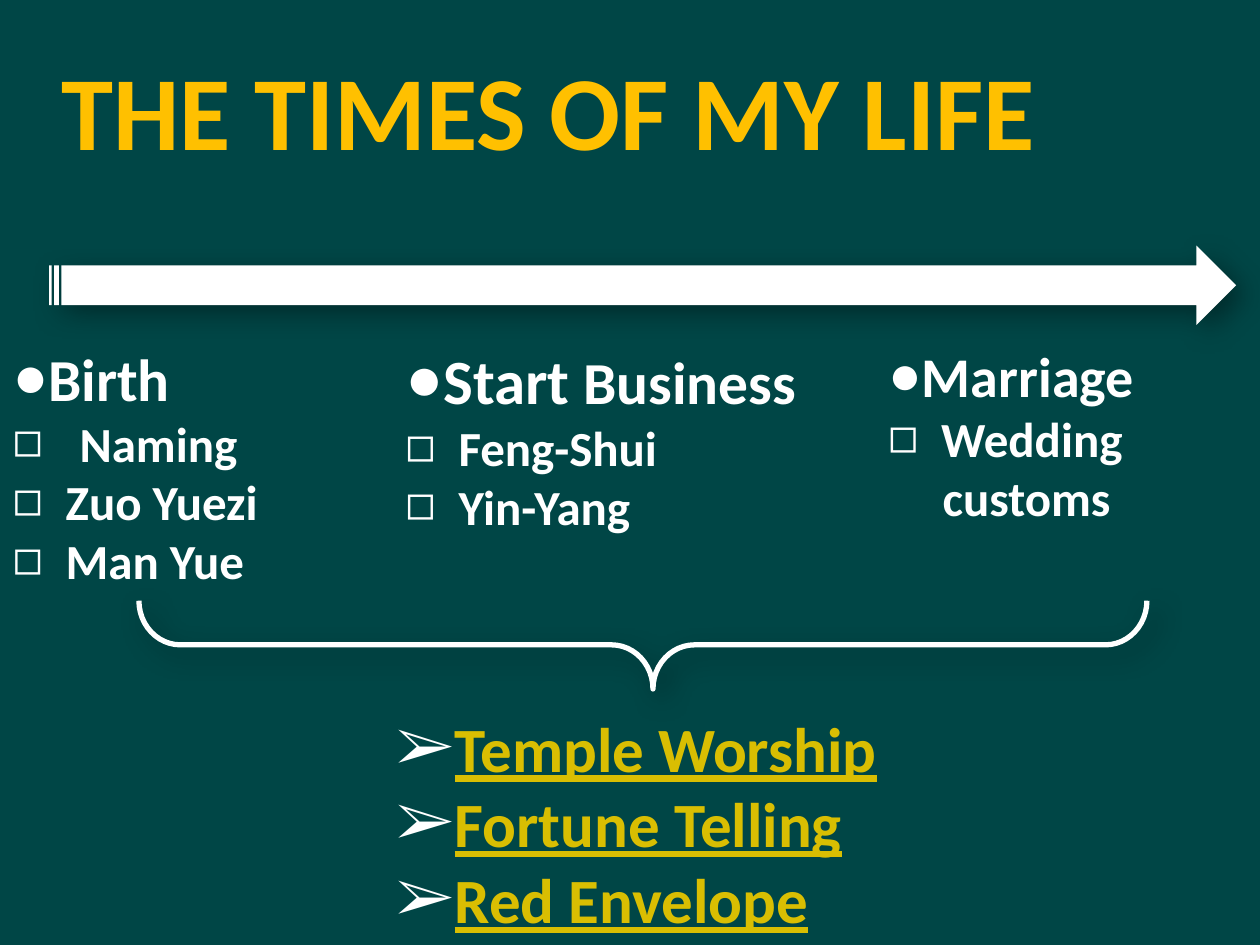
import pptx
import pptx.dml.color
import pptx.enum.shapes
import pptx.enum.text
import pptx.oxml.ns
import pptx.util
from lxml import etree

Cm, Pt = pptx.util.Cm, pptx.util.Pt
qn = pptx.oxml.ns.qn
SHAPES = pptx.enum.shapes.MSO_SHAPE
ANCHOR = pptx.enum.text.MSO_ANCHOR
LEFT = pptx.enum.text.PP_ALIGN.LEFT

# Content: runs as (text, size), bullet, text indent and first-line offset in cm
WHITE, GOLD, AMBER, TEAL = "FFFFFF", "D9BE02", "FFC000", "004646"
TITLE = "THE TIMES OF MY LIFE"
DOT, SQUARE, ARROWHEAD = "●", "◻", "➢"


def heading(*runs):
    return runs, DOT, 0, 0


def custom(text, indent=1.07):
    return [(text, 28)], SQUARE, indent, -indent


def practice(text):
    return [(text, 36)], ARROWHEAD, 1.75, -0.94


LIFE_EVENTS = [
    ((0, 6.76, 6.93, 5.31),
     [heading(("Birth", 34)), custom("Naming", 1.35),
      custom("Zuo Yuezi"), custom("Man Yue")]),
    ((7.92, 6.76, 8.74, 4.19),
     [heading(("Start", 36), (" Business", 34)),
      custom("Feng-Shui"), custom("Yin-Yang")]),
    ((17.65, 6.76, 7.14, 4.01),
     [heading(("Marriage", 32)), custom("Wedding"),
      ([("customs", 28)], None, 1.1, 0)]),
]
SHARED_PRACTICES = (
    (6.93, 14.17, 14.68, 4.88),
    [practice(name) for name in
     ("Temple Worship", "Fortune Telling", "Red Envelope")])

FRAME_FORMAT = {"word_wrap": True, "vertical_anchor": ANCHOR.TOP,
                "auto_size": pptx.enum.text.MSO_AUTO_SIZE.NONE}
PARAGRAPH_FORMAT = {"alignment": LEFT, "line_spacing": 1.0,
                    "space_before": Pt(0), "space_after": Pt(0)}
FONT_FORMAT = {"name": "Calibri", "bold": True}


def rgb(color):
    return pptx.dml.color.RGBColor.from_string(color)


def apply(target, values):
    for name, value in values.items():
        setattr(target, name, value)


def place(part, box):
    apply(part, dict(zip(("left", "top", "width", "height"), map(Cm, box))))


def add_run(paragraph, text, size, color, underline=False):
    run = paragraph.add_run()
    run.text = text
    apply(run.font, {**FONT_FORMAT, "size": Pt(size), "underline": underline})
    run.font.color.rgb = rgb(color)


def set_bullet(paragraph, bullet, indent, offset):
    props = paragraph._p.get_or_add_pPr()
    props.set("marL", str(int(Cm(indent))))
    props.set("indent", str(int(Cm(offset))))
    if bullet is None:
        etree.SubElement(props, qn("a:buNone"))
        return
    color = etree.SubElement(props, qn("a:buClr"))
    etree.SubElement(color, qn("a:srgbClr"), val=WHITE)
    etree.SubElement(props, qn("a:buFont"), typeface="Times New Roman")
    etree.SubElement(props, qn("a:buChar"), char=bullet)


def fill_list(placeholder, box, items, color, underline=False):
    place(placeholder, box)
    frame = placeholder.text_frame
    apply(frame, FRAME_FORMAT)
    for number, (runs, bullet, indent, offset) in enumerate(items):
        paragraph = frame.add_paragraph() if number else frame.paragraphs[0]
        set_bullet(paragraph, bullet, indent, offset)
        apply(paragraph, PARAGRAPH_FORMAT)
        for text, size in runs:
            add_run(paragraph, text, size, color, underline)


def add_shadow(shape):
    shape.shadow.inherit = False
    effects = shape._element.spPr.find(qn("a:effectLst"))
    shadow = etree.SubElement(
        effects, qn("a:outerShdw"), blurRad=str(int(Pt(15))),
        dist=str(int(Pt(6.2))), dir="2700000", algn="tl", rotWithShape="0")
    tone = etree.SubElement(shadow, qn("a:srgbClr"), val="000000")
    etree.SubElement(tone, qn("a:alpha"), val="36000")


def main():
    deck = pptx.Presentation()
    apply(deck, {"slide_width": Cm(25.4), "slide_height": Cm(19.05)})
    slide = deck.slides.add_slide(deck.slide_layouts.get_by_name("Comparison"))
    slide.background.fill.solid()
    slide.background.fill.fore_color.rgb = rgb(TEAL)

    # Title
    title = slide.shapes.title
    place(title, (0.99, 0.79, 23.83, 2.82))
    apply(title.text_frame, FRAME_FORMAT)
    title_line = title.text_frame.paragraphs[0]
    apply(title_line, PARAGRAPH_FORMAT)
    add_run(title_line, TITLE, 60, AMBER)

    # Life events and the practices they share
    *event_bodies, practice_body = list(slide.placeholders)[1:]
    for body, (box, items) in zip(event_bodies, LIFE_EVENTS):
        fill_list(body, box, items, WHITE)
    fill_list(practice_body, *SHARED_PRACTICES, GOLD, underline=True)

    # Brace joining the events
    brace = slide.shapes.add_shape(
        SHAPES.RIGHT_BRACE, Cm(12.07), Cm(2.84), Cm(1.78), Cm(20.32))
    brace.rotation = 90
    brace.adjustments[0], brace.adjustments[1] = 0.47, 0.49
    brace.fill.background()
    brace.line.color.rgb = rgb(WHITE)
    brace.line.width = Pt(3)
    add_shadow(brace)

    # Timeline arrow
    timeline = slide.shapes.add_shape(
        SHAPES.STRIPED_RIGHT_ARROW, Cm(0.99), Cm(4.95), Cm(23.93), Cm(1.6))
    timeline.fill.solid()
    timeline.fill.fore_color.rgb = rgb(WHITE)
    timeline.line.fill.background()
    add_shadow(timeline)

    deck.save("out.pptx")


if __name__ == "__main__":
    main()
